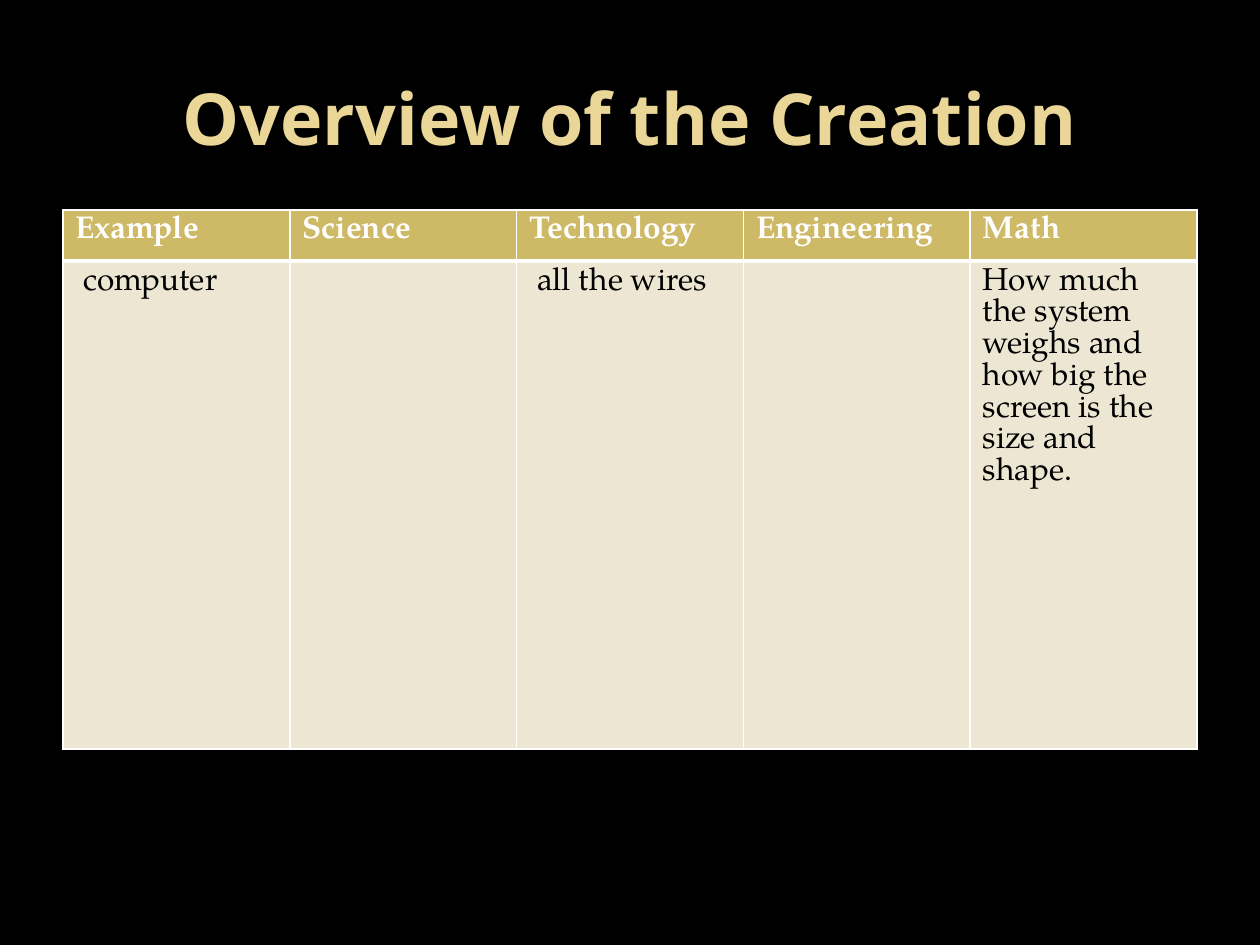
from lxml.etree import SubElement
from pptx import Presentation
from pptx.dml.color import RGBColor as RGB
from pptx.enum.text import MSO_ANCHOR as Anchor, PP_ALIGN as Align
from pptx.oxml.ns import qn
from pptx.util import Pt

COLORS = {
    "background": "000000",
    "title": "EAD696",
    "header": "CEB966",
    "header_text": "FFFFFF",
    "body": "EDE6D3",
    "body_text": "000000",
    "border": "FFFFFF",
}
TITLE_FONT = "Noto Sans"
TABLE_FONT = "TeX Gyre Pagella"

LEFT, WIDTH = 36, 648
ROW_HEIGHTS = (29.2, 278.8)
ROWS = (
    ("Example", "Science", "Technology", "Engineering", "Math"),
    (
        " computer",
        "",
        " all the wires",
        "",
        "How much the system weighs and how big the screen is the size and shape.",
    ),
)


class Deck:
    """Holds the colours and the current slide."""

    def __init__(self, prs, colors):
        self.colors = colors
        self.slide = prs.slides.add_slide(prs.slide_layouts[6])
        fill = self.slide.background.fill
        fill.solid()
        fill.fore_color.rgb = self.rgb("background")

    def rgb(self, name):
        return RGB.from_string(self.colors[name])

    def style(self, p, font, size, color, bold):
        p.font.name = font
        p.font.size = Pt(size)
        p.font.bold = bold
        p.font.color.rgb = self.rgb(color)

    def title(self, text, x, y, w, h):
        tf = self.slide.shapes.add_textbox(Pt(x), Pt(y), Pt(w), Pt(h)).text_frame
        tf.word_wrap = True
        tf.vertical_anchor = Anchor.MIDDLE
        p = tf.paragraphs[0]
        p.text = text
        p.alignment = Align.CENTER
        self.style(p, TITLE_FONT, 41, "title", True)

    def borders(self, cell, widths):
        """Draw the cell's edges, with widths in points keyed by L, R, T and B."""
        props = cell._tc.get_or_add_tcPr()
        for i, (side, width) in enumerate(widths.items()):
            ln = props.makeelement(qn(f"a:ln{side}"), {"w": str(Pt(width))})
            fill = SubElement(ln, qn("a:solidFill"))
            SubElement(fill, qn("a:srgbClr"), val=self.colors["border"])
            props.insert(i, ln)  # edges come before the fill

    def table(self, rows, x, y, w, heights):
        n_cols = len(rows[0])
        table = self.slide.shapes.add_table(
            len(rows), n_cols, Pt(x), Pt(y), Pt(w), Pt(sum(heights))
        ).table
        for col in table.columns:
            col.width = Pt(w / n_cols)
        for i, (texts, height) in enumerate(zip(rows, heights)):
            table.rows[i].height = Pt(height)
            kind = "body" if i else "header"
            for j, text in enumerate(texts):
                cell = table.cell(i, j)
                cell.text = text
                cell.fill.solid()
                cell.fill.fore_color.rgb = self.rgb(kind)
                p = cell.text_frame.paragraphs[0]
                self.style(p, TABLE_FONT, 18, f"{kind}_text", i == 0)
                top, bottom = (3, 1) if i else (1, 3)
                self.borders(cell, {"L": 1, "R": 1, "T": top, "B": bottom})


def main():
    prs = Presentation()
    prs.slide_width, prs.slide_height = Pt(720), Pt(540)
    deck = Deck(prs, COLORS)
    deck.title("Overview of the Creation", LEFT, 21.6, WIDTH, 90)
    deck.table(ROWS, LEFT, 120, WIDTH, ROW_HEIGHTS)
    prs.save("out.pptx")


if __name__ == "__main__":
    main()
